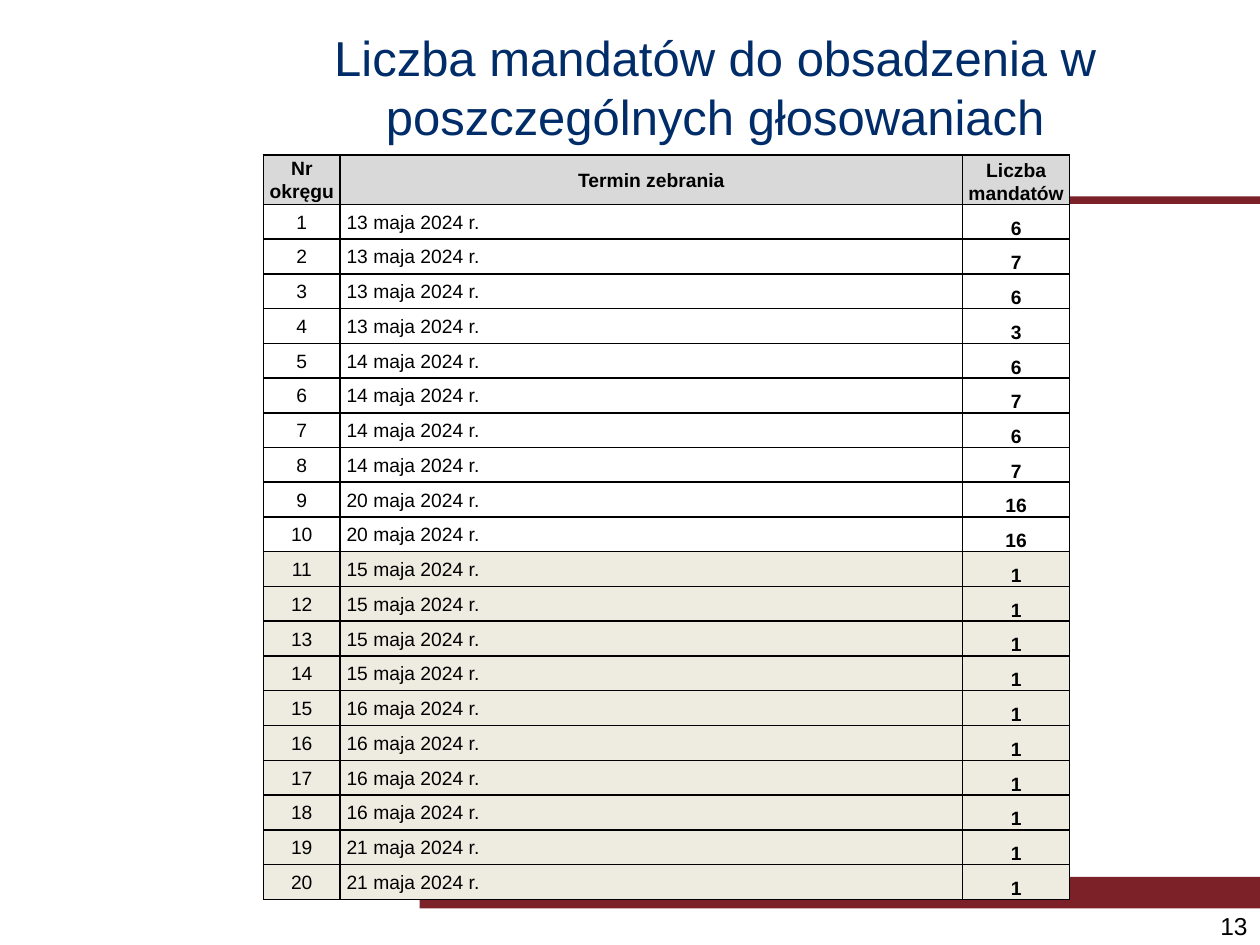
from typing import NamedTuple

from lxml import etree
from pptx import Presentation
from pptx.dml.color import RGBColor
from pptx.enum.shapes import MSO_SHAPE
from pptx.enum.text import MSO_ANCHOR, PP_ALIGN
from pptx.oxml.ns import qn
from pptx.util import Inches, Pt

RECTANGLE = MSO_SHAPE.RECTANGLE
TOP, MIDDLE, BOTTOM = MSO_ANCHOR.TOP, MSO_ANCHOR.MIDDLE, MSO_ANCHOR.BOTTOM
LEFT, CENTER, RIGHT = PP_ALIGN.LEFT, PP_ALIGN.CENTER, PP_ALIGN.RIGHT

COLORS = {
    "bar": "7C2128",
    "title": "002D69",
    "text": "000000",
    "border": "000000",
    "header": "D9D9D9",
    "multi_seat": "FFFFFF",
    "single_seat": "EEECE1",
}
FONT = "Arial"
TABLE_LEFT = 2.09
COLUMN_WIDTHS = (0.61, 4.94, 0.85)
HEADER_HEIGHT = 0.39


class Box(NamedTuple):
    left: float
    top: float
    width: float
    height: float


class Label(NamedTuple):
    box: Box
    text: str
    size: int
    color: str
    align: PP_ALIGN
    anchor: MSO_ANCHOR


class District(NamedTuple):
    number: int
    date: str
    seats: int


class CellStyle(NamedTuple):
    align: PP_ALIGN
    anchor: MSO_ANCHOR
    bold: bool
    space_after: int
    margin: float


HEADERS = ("Nr okręgu", "Termin zebrania", "Liczba mandatów")
HEADER_STYLES = (
    CellStyle(CENTER, MIDDLE, True, 8, 0.03),
    CellStyle(CENTER, MIDDLE, True, 8, 0.03),
    CellStyle(CENTER, BOTTOM, True, 8, 0.03),
)
BODY_STYLES = (
    CellStyle(CENTER, MIDDLE, False, 8, 0.05),
    CellStyle(LEFT, MIDDLE, False, 8, 0.05),
    CellStyle(CENTER, BOTTOM, True, 3, 0.05),
)
MEETINGS = (
    (13, (6, 7, 6, 3)),
    (14, (6, 7, 6, 7)),
    (20, (16, 16)),
    (15, (1, 1, 1, 1)),
    (16, (1, 1, 1, 1)),
    (21, (1, 1)),
)
SCHEDULE = [(day, seats) for day, group in MEETINGS for seats in group]
DISTRICTS = [
    District(number, f"{day} maja 2024 r.", seats)
    for number, (day, seats) in enumerate(SCHEDULE, 1)
]
BARS = (Box(3.33, 1.56, 6.67, 0.06), Box(3.33, 6.96, 6.67, 0.25))
TITLE = Label(
    Box(1.85, 0.06, 7.65, 1.25),
    "Liczba mandatów do obsadzenia w poszczególnych głosowaniach",
    28, "title", CENTER, MIDDLE,
)
PAGE_NUMBER = Label(Box(7.67, 7.18, 2.33, 0.32), "13", 14, "text", RIGHT, TOP)


def rgb(name: str) -> RGBColor:
    return RGBColor.from_string(COLORS[name])


def style_font(p, size: int, color: str, bold: bool = False) -> None:
    p.font.name = FONT
    p.font.size = Pt(size)
    p.font.bold = bold
    p.font.color.rgb = rgb(color)


def add_bar(s, box: Box) -> None:
    sp = s.shapes.add_shape(RECTANGLE, *map(Inches, box))
    sp.shadow.inherit = False
    sp.fill.solid()
    sp.fill.fore_color.rgb = rgb("bar")
    sp.line.fill.background()


def add_label(s, label: Label) -> None:
    tf = s.shapes.add_textbox(*map(Inches, label.box)).text_frame
    tf.word_wrap = True
    tf.vertical_anchor = label.anchor
    p = tf.paragraphs[0]
    p.text = label.text
    p.alignment = label.align
    style_font(p, label.size, label.color)


def set_borders(cell) -> None:
    tc_pr = cell._tc.get_or_add_tcPr()
    for index, side in enumerate(("a:lnL", "a:lnR", "a:lnT", "a:lnB")):
        line = etree.Element(qn(side), w=str(Pt(1)))
        fill = etree.SubElement(line, qn("a:solidFill"))
        etree.SubElement(fill, qn("a:srgbClr"), val=COLORS["border"])
        tc_pr.insert(index, line)


def fill_cell(cell, text: str, style: CellStyle, color: str) -> None:
    cell.fill.solid()
    cell.fill.fore_color.rgb = rgb(color)
    set_borders(cell)
    cell.vertical_anchor = style.anchor
    cell.margin_left = cell.margin_right = Inches(style.margin)
    cell.margin_top = cell.margin_bottom = 0
    p = cell.text_frame.paragraphs[0]
    p.text = text
    p.alignment = style.align
    p.line_spacing = 1.07
    p.space_after = Pt(style.space_after)
    style_font(p, 11, "text", style.bold)


def add_district_table(s, top: float, height: float,
                       districts: list[District], has_header: bool) -> None:
    header_rows = int(has_header)
    row_count = len(districts) + header_rows
    table = s.shapes.add_table(
        row_count, len(COLUMN_WIDTHS), Inches(TABLE_LEFT), Inches(top),
        Inches(sum(COLUMN_WIDTHS)), Inches(height),
    ).table
    table.first_row = False
    table.horz_banding = False
    for column, width in zip(table.columns, COLUMN_WIDTHS):
        column.width = Inches(width)
    body_height = height - HEADER_HEIGHT * header_rows
    for row in table.rows:
        row.height = Inches(body_height / len(districts))
    if has_header:
        table.rows[0].height = Inches(HEADER_HEIGHT)
        for cell, text, style in zip(table.rows[0].cells, HEADERS, HEADER_STYLES):
            fill_cell(cell, text, style, "header")
    for index, district in enumerate(districts, header_rows):
        color = "single_seat" if district.seats == 1 else "multi_seat"
        for cell, value, style in zip(table.rows[index].cells, district, BODY_STYLES):
            fill_cell(cell, str(value), style, color)


def main() -> None:
    prs = Presentation()
    prs.slide_width = Inches(10)
    prs.slide_height = Inches(7.5)
    s = prs.slides.add_slide(prs.slide_layouts[6])
    for box in BARS:
        add_bar(s, box)
    add_label(s, TITLE)
    add_district_table(s, 1.23, 3.7, DISTRICTS[:12], True)
    add_label(s, PAGE_NUMBER)
    add_district_table(s, 4.93, 2.21, DISTRICTS[12:], False)
    prs.save("out.pptx")


if __name__ == "__main__":
    main()
